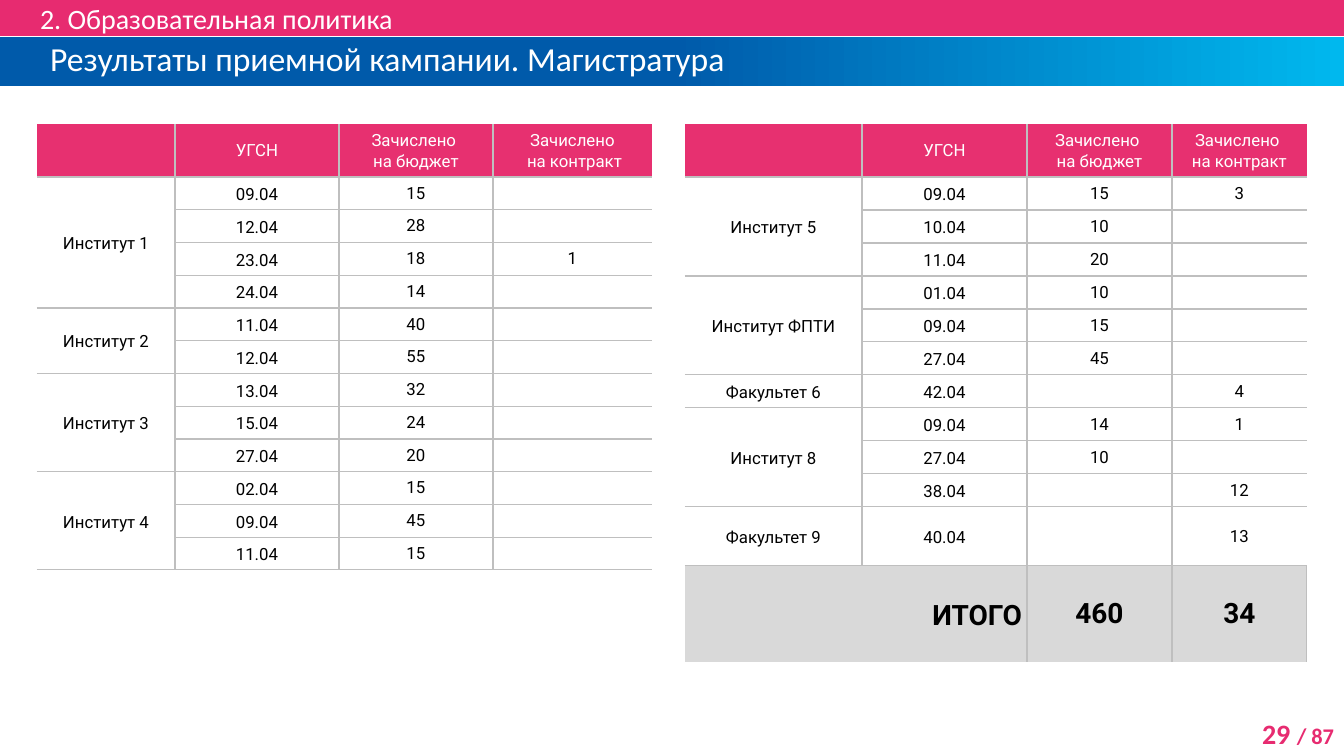
from pptx import Presentation
from pptx.dml.color import RGBColor
from pptx.enum.shapes import MSO_SHAPE as Shape
from pptx.enum.text import MSO_ANCHOR as Anchor, PP_ALIGN as Align
from pptx.oxml import parse_xml
from pptx.oxml.ns import nsdecls
from pptx.util import Emu, Pt

EMU_PER_PX = 12192000 / 1344
PINK, HEADER_PINK, GRID, TOTAL_GREY = "E72B70", "E73070", "BFBFBF", "D9D9D9"
BLUE, SKY, WHITE, BLACK = "005AAA", "00B8EE", "FFFFFF", "000000"
NO_GRID_STYLE = "{2D5ABB26-0587-4C30-8999-92F81FD0307C}"

# Each group: label and its rows (code, state-funded, contract)
LEFT_GROUPS = [
    ("Институт 1", [("09.04", "15", ""), ("12.04", "28", ""), ("23.04", "18", "1"), ("24.04", "14", "")]),
    ("Институт 2", [("11.04", "40", ""), ("12.04", "55", "")]),
    ("Институт 3", [("13.04", "32", ""), ("15.04", "24", ""), ("27.04", "20", "")]),
    ("Институт 4", [("02.04", "15", ""), ("09.04", "45", ""), ("11.04", "15", "")]),
]
RIGHT_GROUPS = [
    ("Институт 5", [("09.04", "15", "3"), ("10.04", "10", ""), ("11.04", "20", "")]),
    ("Институт ФПТИ", [("01.04", "10", ""), ("09.04", "15", ""), ("27.04", "45", "")]),
    ("Факультет 6", [("42.04", "", "4")]),
    ("Институт 8", [("09.04", "14", "1"), ("27.04", "10", ""), ("38.04", "", "12")]),
    ("Факультет 9", [("40.04", "", "13")]),
]
TOTALS = ("ИТОГО", "", "460", "34")


def px(length):
    return Emu(round(length * EMU_PER_PX))


def rgb(color):
    return RGBColor.from_string(color)


def set_font(paragraph, name, size, color, bold=False):
    font = paragraph.font
    font.name, font.size, font.bold = name, Pt(size), bold
    font.color.rgb = rgb(color)


def add_bar(slide, box, text, size, indent):
    """Full-width heading bar; the caller fills it."""
    bar = slide.shapes.add_shape(Shape.RECTANGLE, *map(px, box))
    bar.shadow.inherit = False
    bar.line.fill.background()
    frame = bar.text_frame
    frame.word_wrap = True
    frame.vertical_anchor = Anchor.MIDDLE
    frame.margin_left = px(indent)
    frame.margin_right = frame.margin_top = frame.margin_bottom = 0
    heading = frame.paragraphs[0]
    heading.text = text
    heading.alignment = Align.LEFT
    set_font(heading, "Calibri", size, WHITE)
    return bar


def add_headings(slide, section_box, title_box):
    section = add_bar(slide, section_box, "2. Образовательная политика", 20, 40)
    section.fill.solid()
    section.fill.fore_color.rgb = rgb(PINK)

    title = add_bar(slide, title_box, "Результаты приемной кампании. Магистратура", 24, 50)
    title.text_frame.paragraphs[0].line_spacing = Pt(24)
    title.fill.gradient()
    title.fill.gradient_angle = 0
    for stop, position, color in zip(title.fill.gradient_stops, (0.5, 1), (BLUE, SKY)):
        stop.position = position
        stop.color.rgb = rgb(color)


def add_borders(cell, sides):
    properties = cell._tc.get_or_add_tcPr()
    for side in sides:
        properties.append(parse_xml(
            f'<a:ln{side} {nsdecls("a")} w="12700"><a:solidFill>'
            f'<a:srgbClr val="{GRID}"/></a:solidFill></a:ln{side}>'))


def write_cell(cell, text, size=12, color=BLACK, bold=False, align=Align.CENTER, spacing=None):
    cell.vertical_anchor = Anchor.MIDDLE
    cell.margin_left = cell.margin_right = cell.margin_top = cell.margin_bottom = px(5)
    paragraph = cell.text_frame.paragraphs[0]
    if text:
        paragraph.text = text
        paragraph.alignment = align
        paragraph.line_spacing = spacing
        set_font(paragraph, "Roboto", size, color, bold)
    else:  # keeps an empty cell from stretching its row
        paragraph._p.get_or_add_endParaRPr().set("sz", str(size * 100))


def add_admissions(slide, left, top, widths, heights, contract_header, groups, totals=None):
    """Admissions table with merged group labels and an optional total row."""
    header = ("", "УГСН", "Зачислено \vна бюджет", contract_header)
    rows = [header]
    for label, entries in groups:
        rows += [(label if i == 0 else "", *entry) for i, entry in enumerate(entries)]
    if totals:
        rows.append(totals)
    table = slide.shapes.add_table(
        len(rows), len(widths), px(left), px(top), px(sum(widths)), px(sum(heights))).table
    table._tbl.tblPr[0].text = NO_GRID_STYLE
    table.first_row = table.horz_banding = False
    for column, width in zip(table.columns, widths):
        column.width = px(width)
    for row, height in zip(table.rows, heights):
        row.height = px(height)

    # Merged labels
    first = 1
    for _, entries in groups:
        if len(entries) > 1:
            table.cell(first, 0).merge(table.cell(first + len(entries) - 1, 0))
        first += len(entries)
    if totals:
        table.cell(first, 0).merge(table.cell(first, 1))

    # Cell contents, inner grid and fills
    for r, values in enumerate(rows):
        is_header, is_total = r == 0, values is totals
        for c, value in enumerate(values):
            cell = table.cell(r, c)
            if is_header:
                write_cell(cell, value, color=WHITE, spacing=1.07 if c > 1 else None)
            else:
                write_cell(cell, value, size=20 if is_total else 12, bold=is_total,
                           align=Align.RIGHT if is_total and c == 0 else Align.CENTER,
                           spacing=1.15 if c < 2 else None)
            if not cell.is_spanned:
                inner = {"L": c > 0, "R": c < len(widths) - 1, "T": not is_header, "B": not is_total}
                add_borders(cell, [side for side, drawn in inner.items() if drawn])
            if is_header or is_total:
                cell.fill.solid()
                cell.fill.fore_color.rgb = rgb(HEADER_PINK if is_header else TOTAL_GREY)
            else:
                cell.fill.background()


def add_page_number(slide, box):
    frame = slide.shapes.add_textbox(*map(px, box)).text_frame
    frame.word_wrap = True
    page = frame.paragraphs[0]
    page.alignment = Align.RIGHT
    for text, size in (("29 ", 20), ("/ 87", 16)):
        run = page.add_run()
        run.text = text
        run.font.size = Pt(size)
    set_font(page, "Calibri", 20, PINK, bold=True)


def main():
    deck = Presentation()
    deck.slide_width, deck.slide_height = px(1344), px(756)
    slide = deck.slides.add_slide(deck.slide_layouts[6])
    add_headings(slide, (0, 0, 1344, 36), (0, 37, 1344, 49))
    add_admissions(slide, 37, 124, (138, 164, 154, 159), [53] + [393 / 12] * 12,
                   "Зачислено\v на контракт", LEFT_GROUPS)
    add_admissions(slide, 685, 124, (177, 165, 145, 135), [53] + [33] * 10 + [59, 96],
                   "Зачислено \vна контракт", RIGHT_GROUPS, TOTALS)
    add_page_number(slide, (1223, 712, 121, 44))
    deck.save("out.pptx")


if __name__ == "__main__":
    main()
